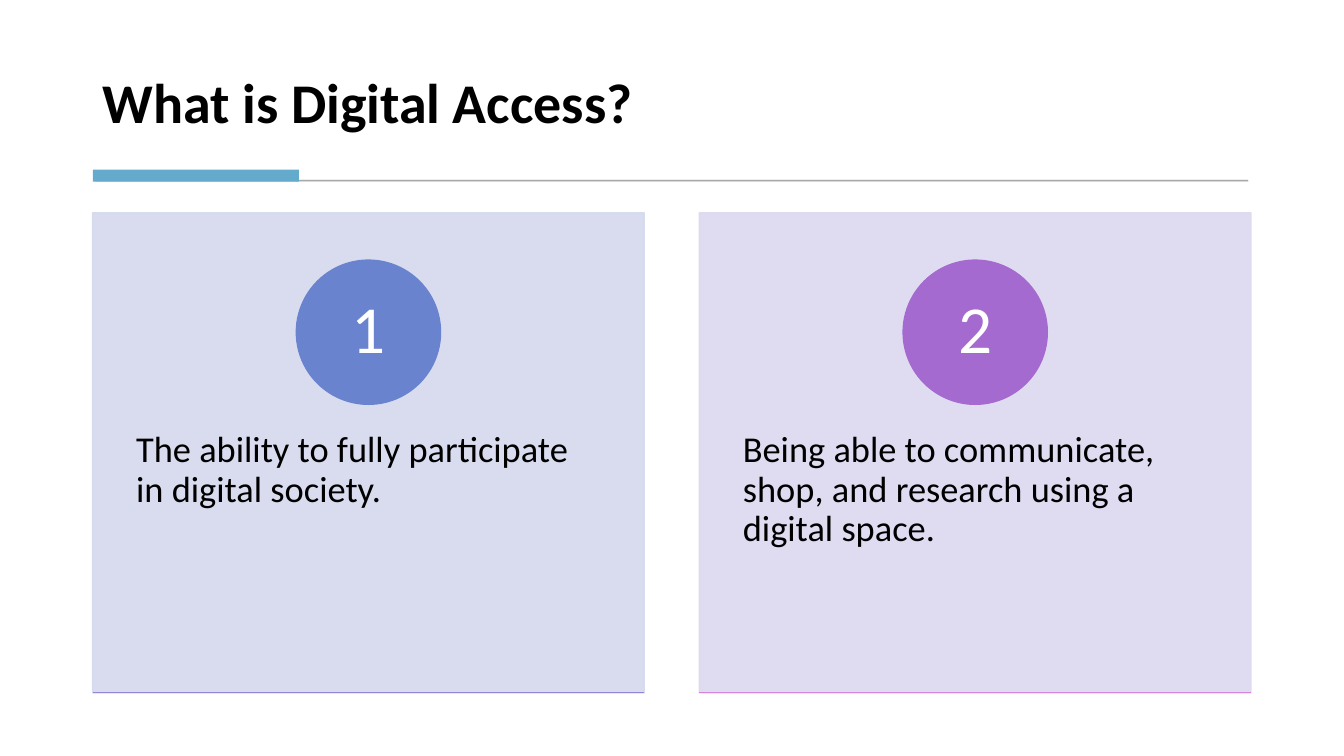
from lxml.etree import SubElement as Sub
from pptx import Presentation
from pptx.dml.color import RGBColor as RGB
from pptx.enum.shapes import MSO_CONNECTOR as Link, MSO_SHAPE as Kind
from pptx.enum.text import MSO_ANCHOR as Anchor, PP_ALIGN as Align
from pptx.oxml.ns import qn
from pptx.util import Pt

BLACK = RGB(0x00, 0x00, 0x00)
WHITE = RGB(0xFF, 0xFF, 0xFF)
GREY = RGB(0x59, 0x59, 0x59)
TEAL = RGB(0x64, 0xAA, 0xCD)
PALE_BLUE = RGB(0xD4, 0xD9, 0xED)
BLUE = RGB(0x6A, 0x83, 0xCF)
VIOLET = RGB(0x92, 0x85, 0xD8)
PALE_LILAC = RGB(0xDC, 0xD9, 0xF0)
PURPLE = RGB(0xA5, 0x6A, 0xCF)
PINK = RGB(0xD7, 0x85, 0xD8)


class Board:
    """Holds the text style and the current slide."""

    def __init__(self, slide, font="Calibri", spacing=0.9):
        self.shapes = slide.shapes
        self.font = font
        self.spacing = spacing

    def shape(self, kind, box, color, line=None, alpha=100):
        item = self.shapes.add_shape(kind, *map(Pt, box))
        item.shadow.inherit = False
        item.fill.solid()
        item.fill.fore_color.rgb = color
        if line:
            item.line.width = Pt(line)
            item.line.color.rgb = color
        else:
            item.line.fill.background()
        if alpha < 100:
            for tint in item._element.spPr.iter(qn("a:srgbClr")):
                Sub(tint, qn("a:alpha")).set("val", str(alpha * 1000))

    def rule(self, left, top, width, color):
        line = self.shapes.add_connector(
            Link.STRAIGHT, Pt(left), Pt(top), Pt(left + width), Pt(top))
        line.line.color.rgb = color
        line.line.width = Pt(1)
        Sub(line._element.spPr, qn("a:effectLst"))

    def text(self, box, words, size, color=BLACK, bold=False, pad=(7.2, 3.6),
             anchor=Anchor.TOP, align=Align.LEFT):
        frame = self.shapes.add_textbox(*map(Pt, box)).text_frame
        frame.word_wrap = True
        frame.vertical_anchor = anchor
        frame.margin_left = frame.margin_right = Pt(pad[0])
        frame.margin_top = frame.margin_bottom = Pt(pad[1])
        para = frame.paragraphs[0]
        para.alignment = align
        para.line_spacing = self.spacing
        run = para.add_run()
        run.text = words
        run.font.name = self.font
        run.font.size = Pt(size)
        run.font.bold = bold
        run.font.color.rgb = color

    def card(self, left, number, words, back, disc, edge):
        top, width, height = 152, 394, 343
        self.shape(Kind.RECTANGLE, (left, top, width, height), back, 1, 90)
        self.text((left, 282.2, width, 206), words, 26, pad=(31, 26))
        # Numbered disc, centred across the card
        size = 103
        spot = (left + (width - size) / 2, 185.8, size, size)
        self.shape(Kind.OVAL, spot, disc, 1)
        self.text(spot, number, 48, WHITE, pad=(8, 0.8),
                  anchor=Anchor.MIDDLE, align=Align.CENTER)
        self.rule(left, top + height - 0.5, width, edge)


def main():
    deck = Presentation()
    deck.slide_width, deck.slide_height = Pt(960), Pt(540)
    board = Board(deck.slides.add_slide(deck.slide_layouts[6]))

    # Title with its accent bar
    board.text((66.2, 20.2, 827.3, 80), "What is Digital Access?", 40,
               bold=True, anchor=Anchor.BOTTOM)
    board.shape(Kind.RECTANGLE, (68.4, 128.7, 823, 0.7), GREY, 0.75, 30)
    board.shape(Kind.RECTANGLE, (66.4, 121.2, 147.2, 8.6), TEAL)

    # Two numbered cards
    cards = [
        ("The ability to fully participate in digital society.",
         PALE_BLUE, BLUE, VIOLET),
        ("Being able to communicate, shop, and research using a digital space.",
         PALE_LILAC, PURPLE, PINK),
    ]
    for i, (words, *colors) in enumerate(cards):
        board.card(66.2 + i * 433.4, str(i + 1), words, *colors)

    deck.save("out.pptx")


if __name__ == "__main__":
    main()
